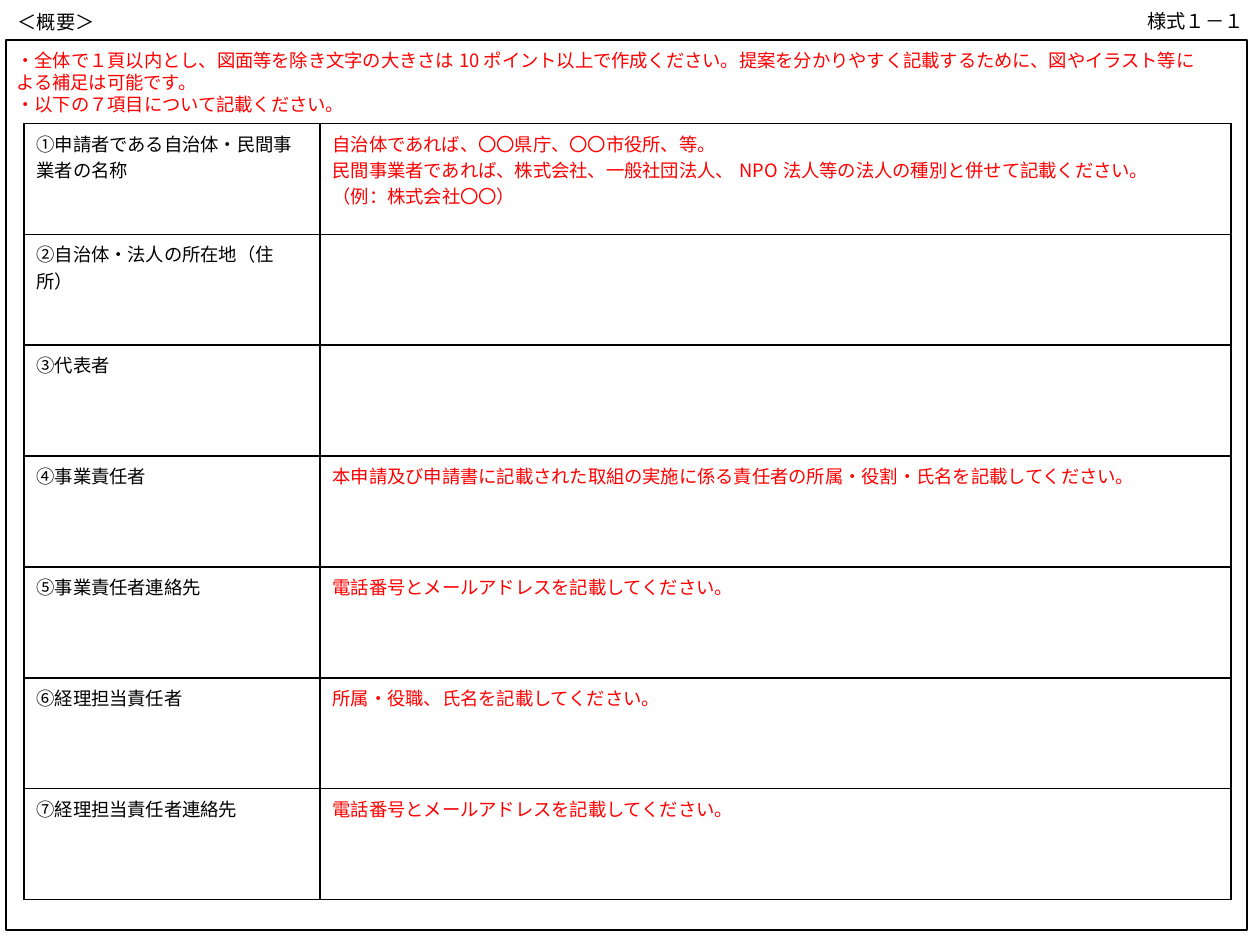
from lxml import etree
from pptx import Presentation
from pptx import util as u
from pptx.dml.color import RGBColor
from pptx.enum import shapes, text
from pptx.oxml.ns import qn

FONT = "Noto Sans CJK JP"
BLACK, RED, WHITE = "000000", "FF0000", "FFFFFF"
ROW_H = 0.88
COLS = [2.35, 7.23]


def rgb(value):
    return RGBColor.from_string(value)


def write(tf, content, size=10.5, color=BLACK, pitch=None, anchor=text.MSO_ANCHOR.TOP,
          align=text.PP_ALIGN.LEFT):
    tf.vertical_anchor = anchor
    for i, line in enumerate(content.split("\n")):
        p = tf.paragraphs[0] if i == 0 else tf.add_paragraph()
        p.alignment = align
        p.space_before = p.space_after = u.Pt(0)
        if pitch:
            p.line_spacing = u.Pt(pitch)
        pPr = p._p.get_or_add_pPr()
        pPr.set("marL", "0")
        pPr.set("indent", "0")
        etree.SubElement(pPr, qn("a:buNone"))
        r = p.add_run()
        r.text = line
        r.font.size = u.Pt(size)
        r.font.bold = False
        r.font.color.rgb = rgb(color)
        r.font.name = FONT
        etree.SubElement(r._r.get_or_add_rPr(), qn("a:ea"), typeface=FONT)


prs = Presentation()
prs.slide_width, prs.slide_height = u.Inches(10), u.Inches(7.5)
s = prs.slides.add_slide(prs.slide_layouts[1])
title, body = s.placeholders

form_no = s.shapes.add_textbox(u.Inches(9), u.Inches(0.02), u.Inches(0.97), u.Inches(0.29))
form_no.text_frame.word_wrap = False
write(form_no.text_frame, "様式１－１", size=11, anchor=text.MSO_ANCHOR.MIDDLE,
      align=text.PP_ALIGN.RIGHT)

for sp, box in ((title, (0.04, 0.03, 2.35, 0.29)), (body, (0.03, 0.34, 9.56, 0.45))):
    sp.left, sp.top, sp.width, sp.height = [u.Inches(v) for v in box]
    sp.text_frame.word_wrap = True
    sp.text_frame.auto_size = text.MSO_AUTO_SIZE.NONE

write(title.text_frame, "＜概要＞", size=11, anchor=text.MSO_ANCHOR.MIDDLE)
write(body.text_frame,
      "・全体で１頁以内とし、図面等を除き文字の大きさは10ポイント以上で作成ください。"
      "提案を分かりやすく記載するために、図やイラスト等による補足は可能です。\n"
      "・以下の７項目について記載ください。",
      color=RED, pitch=12.6)

frame = s.shapes.add_shape(shapes.MSO_SHAPE.RECTANGLE, u.Inches(0.05), u.Inches(0.32),
                           u.Inches(9.85), u.Inches(7.06))
frame.shadow.inherit = False
frame.fill.background()
frame.line.color.rgb = rgb(BLACK)
frame.line.width = u.Pt(1)

items = [
    ("①申請者である自治体・民間事業者の名称",
     "自治体であれば、〇〇県庁、〇〇市役所、等。\n"
     "民間事業者であれば、株式会社、一般社団法人、NPO法人等の法人の種別と併せて記載ください。\n"
     "（例：株式会社〇〇）"),
    ("②自治体・法人の所在地（住所）", ""),
    ("③代表者", ""),
    ("④事業責任者",
     "本申請及び申請書に記載された取組の実施に係る責任者の所属・役割・氏名を記載してください。"),
    ("⑤事業責任者連絡先", "電話番号とメールアドレスを記載してください。"),
    ("⑥経理担当責任者", "所属・役職、氏名を記載してください。"),
    ("⑦経理担当責任者連絡先", "電話番号とメールアドレスを記載してください。"),
]
table = s.shapes.add_table(len(items), len(COLS), u.Inches(0.19), u.Inches(0.98),
                           u.Inches(sum(COLS)), u.Inches(ROW_H * len(items))).table
table.first_row = table.horz_banding = False
for column, width in zip(table.columns, COLS):
    column.width = u.Inches(width)

for row, item in zip(table.rows, items):
    row.height = u.Inches(ROW_H)
    for cell, content, color in zip(row.cells, item, (BLACK, RED)):
        if content:
            write(cell.text_frame, content, color=color)
        tcPr = cell._tc.get_or_add_tcPr()
        for side in ("a:lnL", "a:lnR", "a:lnT", "a:lnB"):
            ln = etree.SubElement(tcPr, qn(side), w=str(u.Pt(1)))
            fill = etree.SubElement(ln, qn("a:solidFill"))
            etree.SubElement(fill, qn("a:srgbClr"), val=BLACK)
        cell.fill.solid()
        cell.fill.fore_color.rgb = rgb(WHITE)

prs.save("out.pptx")
